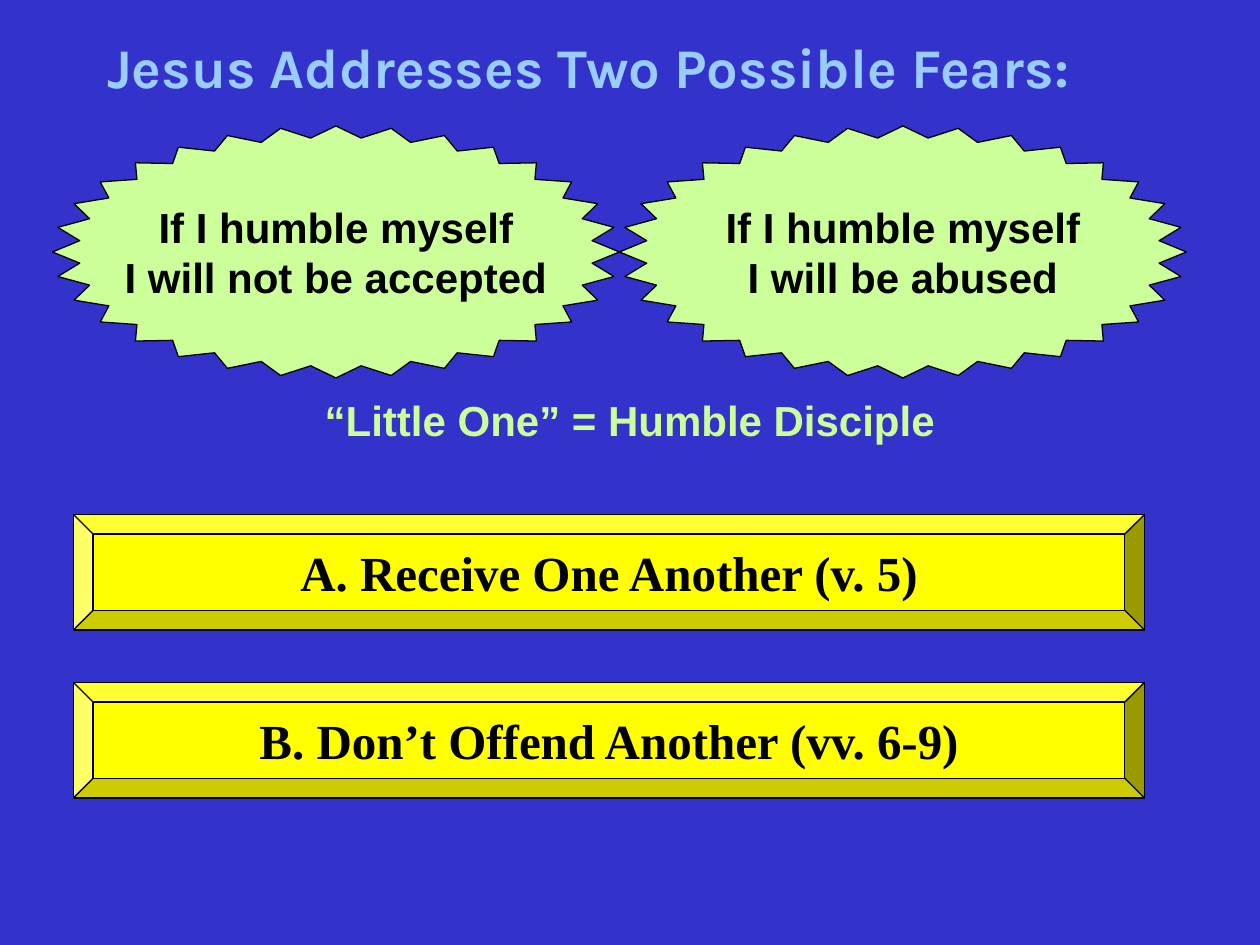
import pptx
import pptx.util
import pptx.dml.color
import pptx.enum.shapes
import pptx.enum.text

Pt = pptx.util.Pt
SHAPE = pptx.enum.shapes.MSO_SHAPE
ALIGN = pptx.enum.text.PP_ALIGN
ANCHOR = pptx.enum.text.MSO_ANCHOR
COLORS = {
    "background": "3333CC",
    "title": "99CCFF",
    "green": "CCFF99",
    "yellow": "FFFF00",
    "black": "000000",
}


def rgb(name):
    return pptx.dml.color.RGBColor.from_string(COLORS[name])


def write_text(shape, text, font="Arial", size=24, color="black",
               align=ALIGN.CENTER, anchor=ANCHOR.MIDDLE, wrap=False):
    frame = shape.text_frame
    frame.text = text
    frame.auto_size = pptx.enum.text.MSO_AUTO_SIZE.NONE
    frame.word_wrap = wrap
    frame.vertical_anchor = anchor
    for paragraph in frame.paragraphs:
        paragraph.alignment = align
        paragraph.font.name = font
        paragraph.font.size = Pt(size)
        paragraph.font.bold = True
        paragraph.font.color.rgb = rgb(color)


presentation = pptx.Presentation()
presentation.slide_width, presentation.slide_height = Pt(720), Pt(540)
slide = presentation.slides.add_slide(presentation.slide_layouts[5])
slide.background.fill.solid()
slide.background.fill.fore_color.rgb = rgb("background")

# Title
title = slide.shapes.title
title.left, title.top, title.width, title.height = Pt(54), Pt(15), Pt(603), Pt(45)
write_text(title, "Jesus Addresses Two Possible Fears:", font="Karla", size=32,
           color="title", align=ALIGN.LEFT, anchor=ANCHOR.TOP, wrap=True)

# Two fears as stars, two answers as bevelled bars
STAR = dict(kind=SHAPE.STAR_32_POINT, adjustment=0.454, fill="green",
            width=324, height=144, font="Arial", size=24)
BAR = dict(kind=SHAPE.BEVEL, adjustment=0.17, fill="yellow",
           width=612, height=66, font="Times New Roman", size=28)
figures = [
    (STAR, 30, 72, "If I humble myself\nI will not be accepted"),
    (STAR, 354, 72, "If I humble myself\nI will be abused"),
    (BAR, 42, 294, "A. Receive One Another (v. 5)"),
    (BAR, 42, 390, "B. Don’t Offend Another (vv. 6-9)"),
]
for style, left, top, text in figures:
    shape = slide.shapes.add_shape(style["kind"], Pt(left), Pt(top),
                                   Pt(style["width"]), Pt(style["height"]))
    shape.adjustments[0] = style["adjustment"]
    shape.shadow.inherit = False
    shape.fill.solid()
    shape.fill.fore_color.rgb = rgb(style["fill"])
    shape.line.color.rgb = rgb("black")
    shape.line.width = Pt(0.75)
    write_text(shape, text, font=style["font"], size=style["size"])

# Definition between stars and bars
definition = slide.shapes.add_textbox(Pt(178.5), Pt(222), Pt(363), Pt(36))
write_text(definition, "“Little One” = Humble Disciple", color="green",
           align=ALIGN.LEFT, anchor=ANCHOR.TOP, wrap=True)

presentation.save("out.pptx")
